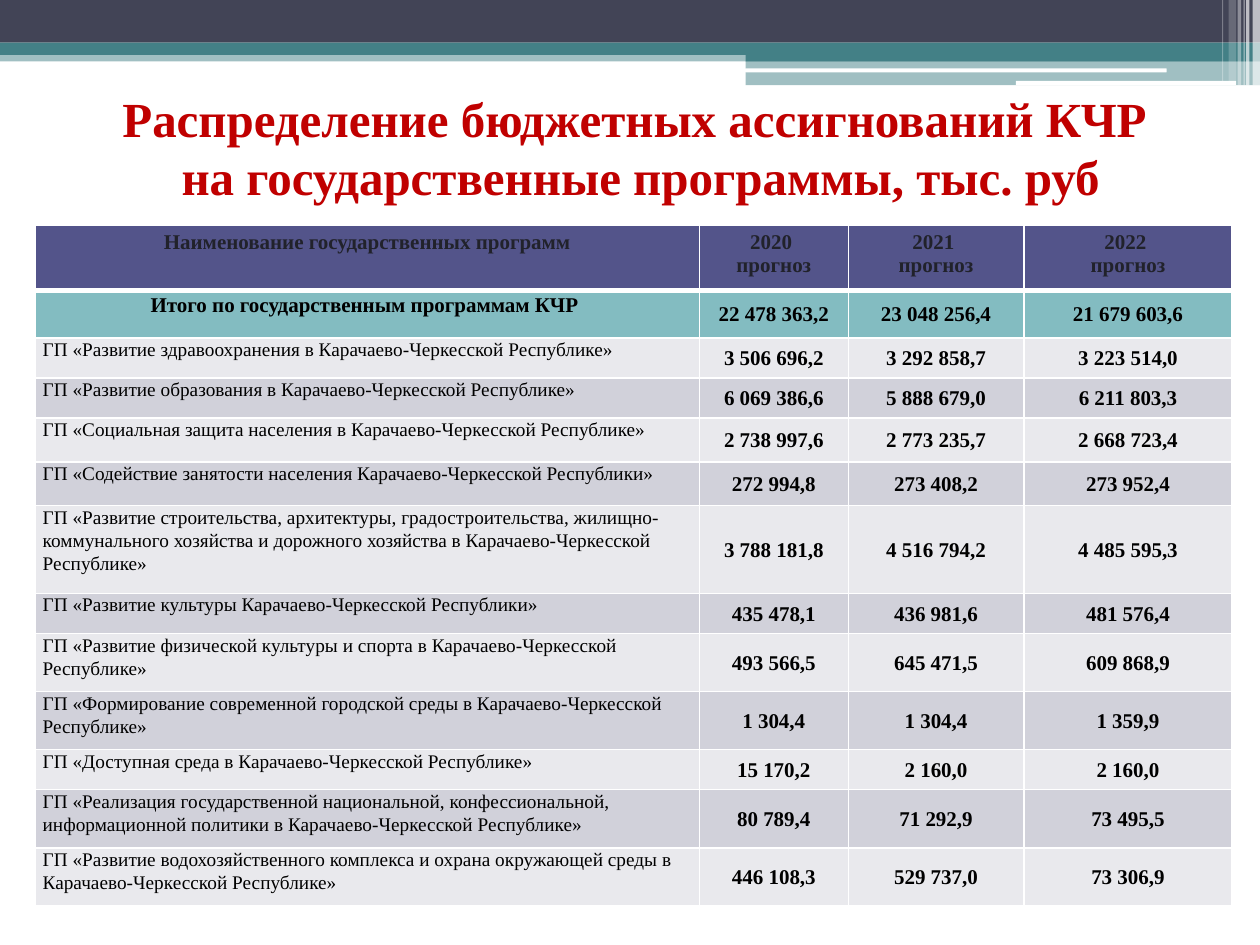
"""Builds a slide with a table of budget allocations by state programme."""
from lxml import etree
from pptx import Presentation, util as u
from pptx.dml.color import RGBColor
from pptx.enum import shapes, text
from pptx.oxml.ns import qn

COLORS = {
    "dark": "424456", "teal": "438086", "white": "FFFFFF", "title": "C00000",
    "head": "53548A", "head_text": "21222B", "total": "83BCC1",
    "light": "E9E9ED", "grey": "D1D1DA", "black": "000000",
}
RECT, ROUND = shapes.MSO_SHAPE.RECTANGLE, shapes.MSO_SHAPE.ROUNDED_RECTANGLE
CENTER, LEFT = text.PP_ALIGN.CENTER, text.PP_ALIGN.LEFT
TOP, MIDDLE = text.MSO_ANCHOR.TOP, text.MSO_ANCHOR.MIDDLE

BANDS = [
    (RECT, 0, 1.01, 25.4, 0.23, "teal", 50),
    (RECT, 0, 0, 25.4, 0.86, "dark", 100),
    (RECT, 0, 0.86, 25.4, 0.25, "teal", 100),
    (RECT, 15.03, 0.99, 10.37, 0.25, "teal", 100),
    (RECT, 15.03, 1.23, 10.37, 0.49, "teal", 50),
    (ROUND, 15.02, 1.38, 8.5, 0.08, "white", 100),
    (ROUND, 20.48, 1.63, 4.44, 0.09, "white", 100),
]
STRIPES = [
    (25.25, 0.15, 1.73, 65), (25.12, 0.07, 1.73, 65), (25.07, 0.02, 1.73, 60),
    (24.95, 0.07, 1.73, 40), (24.77, 0.15, 1.63, 20), (24.64, 0.02, 1.63, 30),
]
TITLE = ["Распределение бюджетных ассигнований КЧР",
         " на государственные программы, тыс. руб"]
COLS = [13.39, 3.0, 3.54, 4.2]
ROWS = [
    (1.3, "Наименование государственных программ",
     "2020 \nпрогноз", "2021 \nпрогноз", "2022 \nпрогноз"),
    (0.96, "Итого по государственным программам КЧР ",
     "22 478 363,2", "23 048 256,4", "21 679 603,6"),
    (0.81, "ГП «Развитие здравоохранения в Карачаево-Черкесской Республике»",
     "3 506 696,2", "3 292 858,7", "3 223 514,0"),
    (0.81, "ГП «Развитие образования в Карачаево-Черкесской Республике»",
     "6 069 386,6", "5 888 679,0", "6 211 803,3"),
    (0.88, "ГП «Социальная защита населения в Карачаево-Черкесской Республике»",
     "2 738 997,6", "2 773 235,7", "2 668 723,4"),
    (0.88, "ГП «Содействие занятости населения Карачаево-Черкесской Республики»",
     "272 994,8", "273 408,2", "273 952,4"),
    (1.77, "ГП «Развитие строительства, архитектуры, градостроительства, "
     "жилищно-коммунального хозяйства и дорожного хозяйства в "
     "Карачаево-Черкесской Республике»",
     "3 788 181,8", "4 516 794,2", "4 485 595,3"),
    (0.81, "ГП «Развитие культуры Карачаево-Черкесской Республики»",
     "435 478,1", "436 981,6", "481 576,4"),
    (1.17, "ГП «Развитие физической культуры и спорта в "
     "Карачаево-Черкесской Республике»",
     "493 566,5", "645 471,5", "609 868,9"),
    (1.17, "ГП «Формирование современной городской среды в "
     "Карачаево-Черкесской Республике»",
     "1 304,4", "1 304,4", "1 359,9"),
    (0.81, "ГП «Доступная среда в Карачаево-Черкесской Республике»",
     "15 170,2", "2 160,0", "2 160,0"),
    (1.17, "ГП «Реализация государственной национальной, конфессиональной, "
     "информационной политики в Карачаево-Черкесской Республике»",
     "80 789,4", "71 292,9", "73 495,5"),
    (1.17, "ГП «Развитие водохозяйственного комплекса и охрана окружающей "
     "среды в Карачаево-Черкесской Республике»",
     "446 108,3", "529 737,0", "73 306,9"),
]


class Deck:
    """Holds the style and the current slide."""

    def __init__(self, font="Times New Roman"):
        self.font = font
        self.prs = Presentation()
        self.prs.slide_width, self.prs.slide_height = u.Cm(25.4), u.Cm(19.05)
        self.s = self.prs.slides.add_slide(self.prs.slide_layouts[5])

    def rgb(self, name):
        return RGBColor.from_string(COLORS[name])

    def lines(self, tf, lines, size, color, bold=True, align=CENTER, spacing=1.0):
        for i, line in enumerate(lines):
            p = tf.add_paragraph() if i else tf.paragraphs[0]
            p.alignment, p.line_spacing = align, spacing
            p.space_before = p.space_after = u.Pt(0)
            r = p.add_run()
            r.text = line
            r.font.name, r.font.size, r.font.bold = self.font, u.Pt(size), bold
            r.font.color.rgb = self.rgb(color)

    def title(self, lines, x, y, w, h):
        sp = self.s.shapes.title
        sp.left, sp.top, sp.width, sp.height = map(u.Cm, (x, y, w, h))
        tf = sp.text_frame
        tf.word_wrap, tf.vertical_anchor = False, TOP
        tf.auto_size = text.MSO_AUTO_SIZE.NONE
        self.lines(tf, lines, 28, "title")

    def band(self, kind, x, y, w, h, color, alpha):
        sp = self.s.shapes.add_shape(kind, *map(u.Cm, (x, y, w, h)))
        sp.shadow.inherit = False
        sp.line.fill.background()
        sp.fill.solid()
        sp.fill.fore_color.rgb = self.rgb(color)
        if alpha < 100:
            clr = sp._element.spPr.find(".//" + qn("a:srgbClr"))
            etree.SubElement(clr, qn("a:alpha"), val=str(alpha * 1000))

    def borders(self, cell, bottom):
        tcPr = cell._tc.get_or_add_tcPr()
        for i, (side, width) in enumerate(zip("LRTB", (1, 1, 1, bottom))):
            ln = etree.Element(qn("a:ln" + side), w=str(u.Pt(width)))
            fill = etree.SubElement(ln, qn("a:solidFill"))
            etree.SubElement(fill, qn("a:srgbClr"), val=COLORS["white"])
            tcPr.insert(i, ln)

    def cell(self, cell, row, col, value):
        head, total, name = row == 0, row == 1, col == 0
        fill = ("head" if head else "total" if total
                else "grey" if row % 2 else "light")
        plain = name and row > 1
        side = 0.15 if head or plain else 0.1 if name else 0.18
        cell.margin_left = cell.margin_right = u.Cm(side)
        cell.margin_top = cell.margin_bottom = u.Cm(0.1 if head else 0)
        cell.vertical_anchor = TOP if head or name else MIDDLE
        cell.fill.solid()
        cell.fill.fore_color.rgb = self.rgb(fill)
        self.borders(cell, 3 if head else 1)
        self.lines(cell.text_frame, value.split("\n"), 11 if plain else 12,
                   "head_text" if head else "black", not plain,
                   LEFT if plain else CENTER,
                   1.0 if head else 1.15 if total and name else 1.07)

    def table(self, rows, cols, x, y):
        size = sum(cols), sum(row[0] for row in rows)
        tbl = self.s.shapes.add_table(
            len(rows), len(cols), *map(u.Cm, (x, y, *size))).table
        for c, width in enumerate(cols):
            tbl.columns[c].width = u.Cm(width)
        for r, (height, *values) in enumerate(rows):
            tbl.rows[r].height = u.Cm(height)
            for c, value in enumerate(values):
                self.cell(tbl.cell(r, c), r, c, value)


def main():
    deck = Deck()
    for band in BANDS:
        deck.band(*band)
    for x, w, h, alpha in STRIPES:
        deck.band(RECT, x, 0, w, h, "white", alpha)
    deck.table(ROWS, COLS, 0.71, 4.55)
    deck.title(TITLE, 2.11, 1.65, 21.36, 2.64)
    deck.prs.save("out.pptx")


if __name__ == "__main__":
    main()
